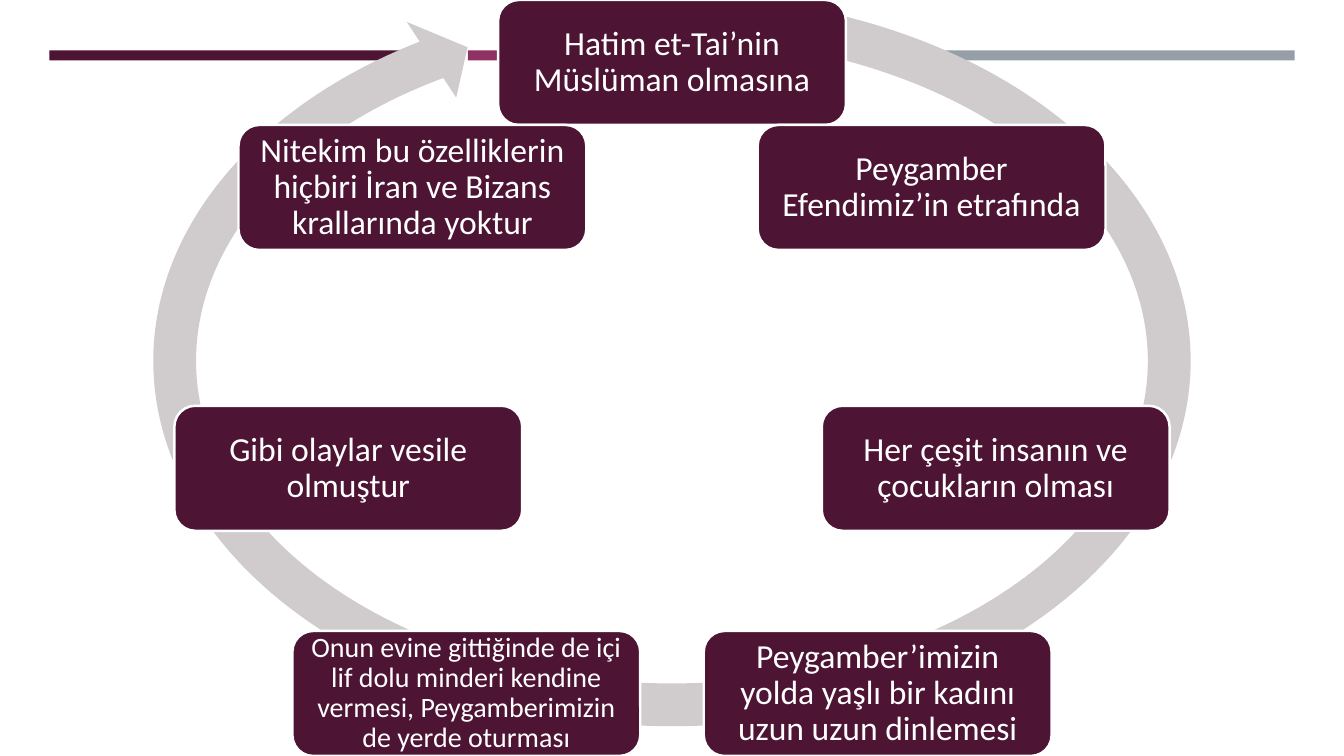
import math

from pptx import Presentation
from pptx.dml.color import RGBColor
from pptx.enum.shapes import MSO_SHAPE
from pptx.enum.text import MSO_ANCHOR, PP_ALIGN
from pptx.util import Inches, Pt

RECTANGLE = MSO_SHAPE.RECTANGLE
ROUNDED = MSO_SHAPE.ROUNDED_RECTANGLE
CIRCULAR_ARROW = MSO_SHAPE.CIRCULAR_ARROW
MIDDLE = MSO_ANCHOR.MIDDLE
CENTER = PP_ALIGN.CENTER

PLUM, MAGENTA, SLATE = "4D1434", "903163", "969FA7"
ARROW_GRAY, WHITE = "D0CCCE", "FFFFFF"

CARD_WIDTH, CARD_HEIGHT = 3.45, 1.24
MINIMUM_GAP = 0.63

# Clockwise from the top: wording, text size, inset
STEPS = [
    ("Hatim et-Tai’nin Müslüman olmasına", 24, 0.1),
    ("Peygamber Efendimiz’in etrafında", 24, 0.1),
    ("Her çeşit insanın ve çocukların olması", 24, 0.1),
    ("Peygamber’imizin yolda yaşlı bir kadını uzun uzun dinlemesi", 24, 0.1),
    ("Onun evine gittiğinde de içi lif dolu minderi kendine vermesi, "
     "Peygamberimizin de yerde oturması", 20, 0.08),
    ("Gibi olaylar vesile olmuştur", 24, 0.1),
    ("Nitekim bu özelliklerin hiçbiri İran ve Bizans krallarında yoktur", 24, 0.1),
]


def color(hex_string):
    return RGBColor.from_string(hex_string)


def add_block(slide, kind, left, top, width, height, fill, line=None):
    shape = slide.shapes.add_shape(
        kind, Inches(left), Inches(top), Inches(width), Inches(height))
    shape.shadow.inherit = False
    shape.fill.solid()
    shape.fill.fore_color.rgb = color(fill)
    if line:
        shape.line.color.rgb = color(line)
        shape.line.width = Pt(1.75)
    else:
        shape.line.fill.background()
    return shape


def write_text(shape, text, size=24, inset=0.1, font="Calibri", fill=WHITE):
    frame = shape.text_frame
    frame.word_wrap = True
    frame.vertical_anchor = MIDDLE
    frame.margin_left = frame.margin_right = Inches(inset)
    frame.margin_top = frame.margin_bottom = Inches(inset)
    paragraph = frame.paragraphs[0]
    paragraph.alignment = CENTER
    paragraph.line_spacing = 0.9
    run = paragraph.add_run()
    run.text = text
    run.font.name = font
    run.font.size = Pt(size)
    run.font.color.rgb = color(fill)


def add_header_bars(slide, left, top, width, height, gap=0.1):
    bar_width = (width - 2 * gap) / 3
    for index, fill in enumerate((PLUM, MAGENTA, SLATE)):
        add_block(slide, RECTANGLE, left + index * (bar_width + gap), top,
                  bar_width, height, fill)


def add_cycle(slide, left, top, width, height):
    center_x = left + width / 2

    # Ring with its arrowhead, centred behind the cards
    ring_width, ring_height = 10.76, 7.72
    ring = add_block(slide, CIRCULAR_ARROW, center_x - ring_width / 2, top - 0.28,
                     ring_width, ring_height, ARROW_GRAY)
    for index, value in enumerate((0.055, 3.307, 138.839, 173.206, 0.058)):
        ring.adjustments[index] = value

    # Cards at equal angles; the lowest two are pushed apart to keep a gap
    angle_step = 2 * math.pi / len(STEPS)
    lowest = len(STEPS) // 2
    radius = (height - CARD_HEIGHT) / (1 - math.cos(lowest * angle_step))
    for index, (text, size, inset) in enumerate(STEPS):
        angle = index * angle_step
        offset = radius * math.sin(angle)
        if index in (lowest, lowest + 1):
            offset = math.copysign((CARD_WIDTH + MINIMUM_GAP) / 2, offset)
        card = add_block(slide, ROUNDED, center_x + offset - CARD_WIDTH / 2,
                         top + radius * (1 - math.cos(angle)),
                         CARD_WIDTH, CARD_HEIGHT, PLUM, line=WHITE)
        write_text(card, text, size=size, inset=inset)


def main():
    presentation = Presentation()
    presentation.slide_width = Inches(13.33)
    presentation.slide_height = Inches(7.5)
    slide = presentation.slides.add_slide(presentation.slide_layouts[6])
    add_header_bars(slide, 0.49, 0.5, 12.35, 0.1)
    add_cycle(slide, 0, 0, 13.33, 7.5)
    presentation.save("out.pptx")


if __name__ == "__main__":
    main()
